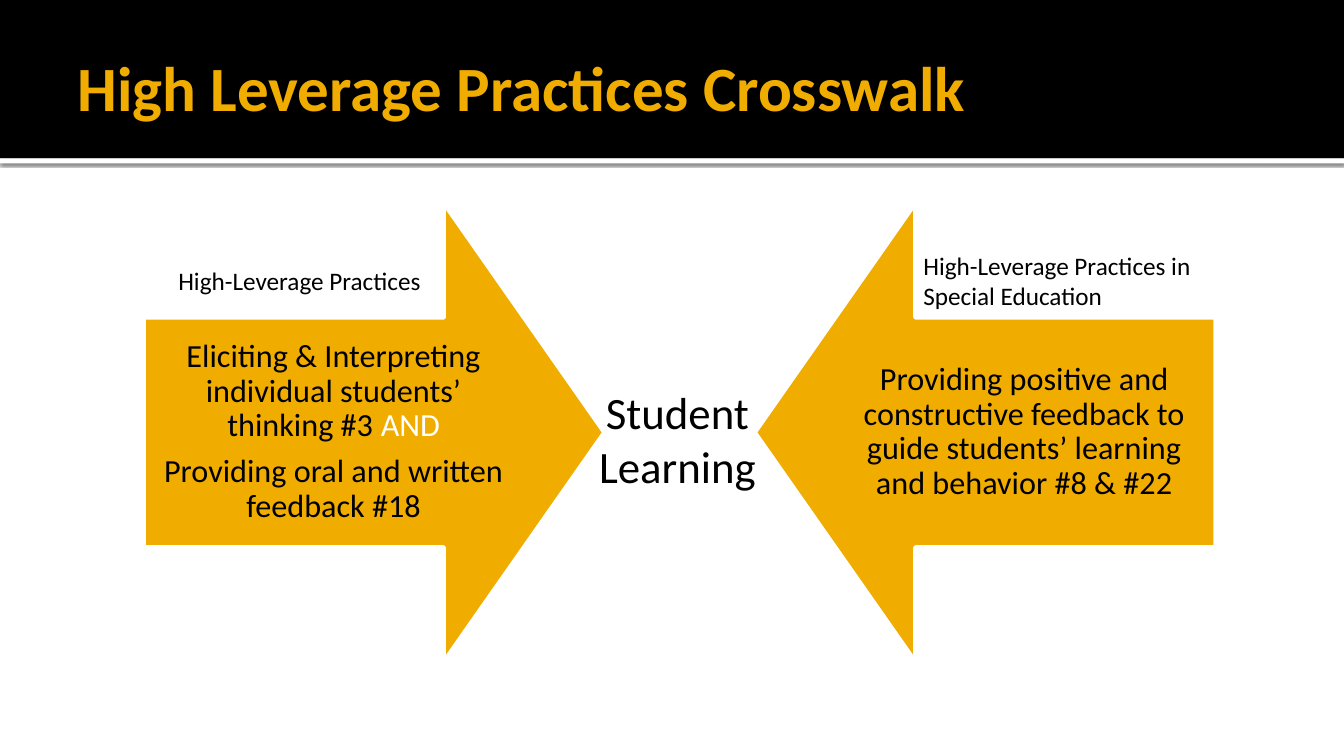
"""Build the High Leverage Practices Crosswalk slide."""
from dataclasses import dataclass

import lxml.etree
import pptx
import pptx.dml.color
import pptx.enum.shapes
import pptx.enum.text
import pptx.oxml
import pptx.oxml.ns
import pptx.shapes.autoshape
import pptx.slide
import pptx.util

Inches = pptx.util.Inches
Pt = pptx.util.Pt
Align = pptx.enum.text.PP_ALIGN
Anchor = pptx.enum.text.MSO_ANCHOR
AutoSize = pptx.enum.text.MSO_AUTO_SIZE
Shape = pptx.enum.shapes.MSO_SHAPE


@dataclass(frozen=True)
class Theme:
    """Colours, font and type sizes of the slide."""
    gold: str = "F0AD00"
    black: str = "000000"
    white: str = "FFFFFF"
    font: str = "Calibri"
    title: int = 45
    goal: int = 32
    practice: int = 23
    label: int = 18


@dataclass(frozen=True)
class Box:
    """Place and size in inches."""
    left: float
    top: float
    width: float
    height: float

    def lengths(self) -> list[pptx.util.Length]:
        """Return the four values as lengths."""
        return [Inches(v) for v in (self.left, self.top, self.width, self.height)]


@dataclass(frozen=True)
class Run:
    """A piece of text in one colour."""
    text: str
    color: str


@dataclass(frozen=True)
class Band:
    """A full-width strip of the title header."""
    box: Box
    color: str
    shadow: bool = False


@dataclass(frozen=True)
class Arrow:
    """An arrow pointing at the goal, with its practices."""
    left: float
    rotation: int
    text_left: float
    practices: list[list[Run]]


@dataclass(frozen=True)
class Label:
    """A free text with one line per paragraph."""
    box: Box
    lines: list[str]
    size: int
    align: Align = Align.LEFT


THEME = Theme()
SLIDE_W, SLIDE_H = 13.33, 7.5
HEADER_H = 1.57
ARROW_TOP, ARROW_SIZE = 2, 4.58
TEXT_TOP, TEXT_W, TEXT_H = 3.14, 3.78, 2.29

BANDS = [
    Band(Box(0, HEADER_H, SLIDE_W, 0.05), THEME.white, shadow=True),
    Band(Box(0, 0, SLIDE_W, HEADER_H), THEME.black),
]
ARROWS = [
    Arrow(1.42, 270, 1.42, [
        [Run("Eliciting & Interpreting individual students’ thinking #3 ", THEME.black),
         Run("AND", THEME.white)],
        [Run("Providing oral and written feedback #18", THEME.black)],
    ]),
    Arrow(7.48, 90, 8.27, [
        [Run("Providing positive and constructive feedback to guide students’ "
             "learning and behavior #8 & #22", THEME.black)],
    ]),
]
LABELS = [
    Label(Box(5.8, 3.77, 1.84, 1.18), ["Student", "Learning"], THEME.goal, Align.CENTER),
    Label(Box(1.67, 2.58, 2.75, 0.4), ["High-Leverage Practices"], THEME.label),
    Label(Box(9.06, 2.43, 2.99, 0.71),
          ["High-Leverage Practices in", "Special Education"], THEME.label),
]


def rgb(color: str) -> pptx.dml.color.RGBColor:
    """Return a colour from its hex string."""
    return pptx.dml.color.RGBColor.from_string(color)


def format_run(r, size: int, color: str, bold: bool = False) -> None:
    """Set the font of a run."""
    r.font.name, r.font.size, r.font.bold = THEME.font, Pt(size), bold
    r.font.color.rgb = rgb(color)


def set_insets(tf, left: float, top: float, right: float, bottom: float) -> None:
    """Set the margins of a text frame in inches."""
    tf.margin_left, tf.margin_top = Inches(left), Inches(top)
    tf.margin_right, tf.margin_bottom = Inches(right), Inches(bottom)


def add_filled(s: pptx.slide.Slide, kind: Shape, box: Box,
               color: str) -> pptx.shapes.autoshape.Shape:
    """Add a flat filled shape without an outline."""
    sp = s.shapes.add_shape(kind, *box.lengths())
    sp.shadow.inherit = False
    sp.fill.solid()
    sp.fill.fore_color.rgb = rgb(color)
    sp.line.fill.background()
    return sp


def add_shadow(sp: pptx.shapes.autoshape.Shape) -> None:
    """Give a shape a soft shadow below it."""
    effects = sp.element.spPr.find(pptx.oxml.ns.qn("a:effectLst"))
    effects.append(pptx.oxml.parse_xml(
        '<a:outerShdw xmlns:a="http://schemas.openxmlformats.org/drawingml/2006/main" '
        f'blurRad="{Pt(2.5)}" dist="{Pt(0.8)}" dir="5400000" rotWithShape="0">'
        f'<a:srgbClr val="{THEME.black}"><a:alpha val="60000"/></a:srgbClr></a:outerShdw>'))


def add_header(s: pptx.slide.Slide, text: str) -> None:
    """Fill the title and set the header bands behind it."""
    title = s.shapes.title
    title.left, title.top, title.width, title.height = Box(0.67, 0.17, 12, 1.37).lengths()
    tf = title.text_frame
    tf.text = text
    tf.word_wrap, tf.auto_size = True, AutoSize.NONE
    tf.vertical_anchor = Anchor.MIDDLE
    set_insets(tf, 0.1, 0.05, 0.05, 0.05)
    p = tf.paragraphs[0]
    p.alignment = Align.LEFT
    format_run(p.runs[0], THEME.title, THEME.gold, bold=True)
    for band in BANDS:
        sp = add_filled(s, Shape.RECTANGLE, band.box, band.color)
        if band.shadow:
            add_shadow(sp)
        title.element.addprevious(sp.element)


def add_arrow(s: pptx.slide.Slide, arrow: Arrow) -> None:
    """Add an arrow and the practices written on it."""
    box = Box(arrow.left, ARROW_TOP, ARROW_SIZE, ARROW_SIZE)
    sp = add_filled(s, Shape.DOWN_ARROW, box, THEME.gold)
    sp.rotation = arrow.rotation
    sp.adjustments[0], sp.adjustments[1] = 0.5, 0.35
    sp.line.color.rgb = rgb(THEME.white)
    sp.line.width = Pt(3.78)
    tf = s.shapes.add_textbox(
        *Box(arrow.text_left, TEXT_TOP, TEXT_W, TEXT_H).lengths()).text_frame
    tf.word_wrap, tf.vertical_anchor = True, Anchor.MIDDLE
    set_insets(tf, 0.18, 0.18, 0.18, 0.18)
    for i, practice in enumerate(arrow.practices):
        p = tf.add_paragraph() if i else tf.paragraphs[0]
        p.alignment, p.line_spacing, p.space_after = Align.CENTER, 0.9, Pt(8)
        for run in practice:
            r = p.add_run()
            r.text = run.text
            format_run(r, THEME.practice, run.color)


def add_label(s: pptx.slide.Slide, label: Label) -> None:
    """Add a free text."""
    tf = s.shapes.add_textbox(*label.box.lengths()).text_frame
    tf.text = "\n".join(label.lines)
    tf.word_wrap, tf.auto_size = False, AutoSize.SHAPE_TO_FIT_TEXT
    for p in tf.paragraphs:
        p.alignment = label.align
        format_run(p.runs[0], label.size, THEME.black)


def main() -> None:
    """Build and save the slide."""
    prs = pptx.Presentation()
    prs.slide_width, prs.slide_height = Inches(SLIDE_W), Inches(SLIDE_H)
    s = prs.slides.add_slide(prs.slide_layouts.get_by_name("Title Only"))
    add_header(s, "High Leverage Practices Crosswalk")
    for arrow in ARROWS:
        add_arrow(s, arrow)
    for label in LABELS:
        add_label(s, label)
    prs.save("out.pptx")


if __name__ == "__main__":
    main()
